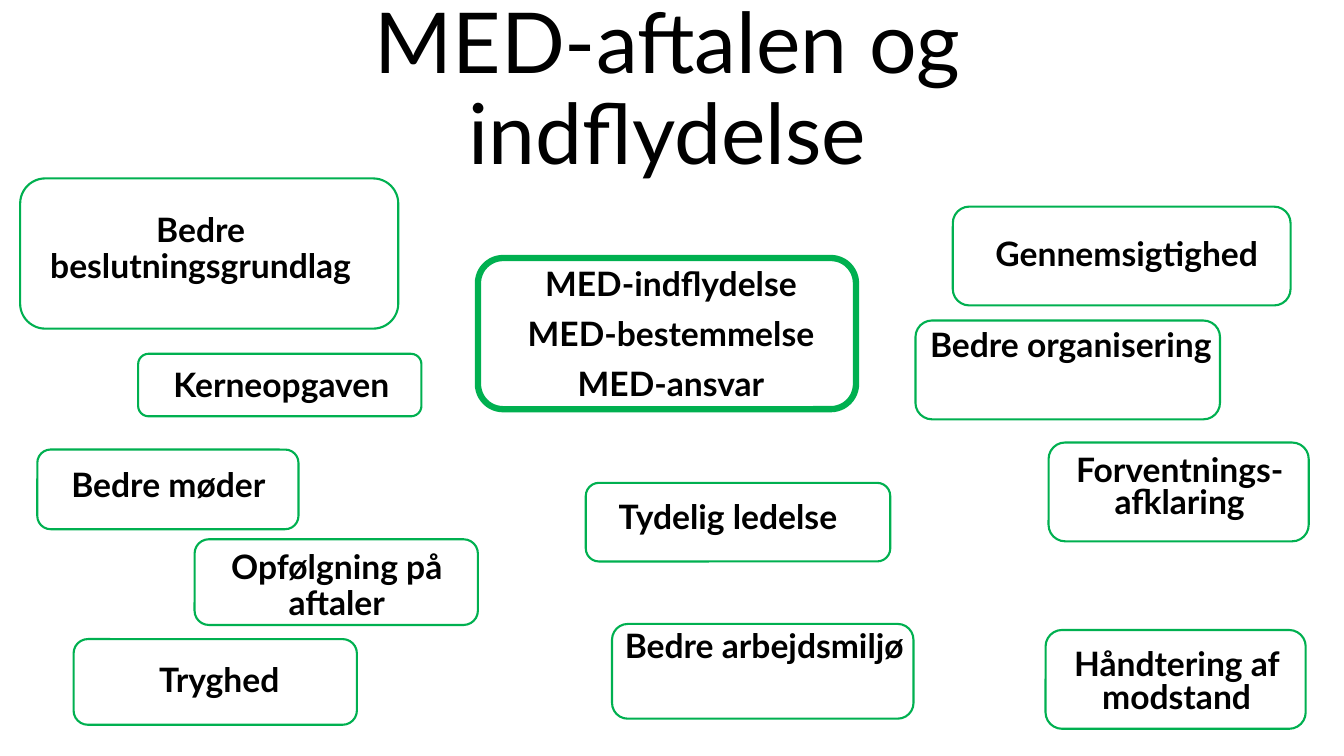
from pptx import Presentation
from pptx.dml.color import RGBColor
from pptx.enum.shapes import MSO_SHAPE
from pptx.enum.text import MSO_ANCHOR, PP_ALIGN
from pptx.util import Pt

ROUNDED = MSO_SHAPE.ROUNDED_RECTANGLE
TOP = MSO_ANCHOR.TOP
BOTTOM = MSO_ANCHOR.BOTTOM
CENTER = PP_ALIGN.CENTER

EMU_PER_PX = 9144
SLIDE_SIZE = (1333, 750)
COLORS = {"text": "000000", "outline": "00B050", "background": "FFFFFF"}

TOPICS = [
    ("Bedre beslutningsgrundlag", (20, 177, 375, 149), (20, 207, 358, 68), 0.9),
    ("Kerneopgaven", (137, 351, 281, 62), (128, 361, 302, 48), 0.9),
    ("Bedre møder", (37, 446, 259, 79), (16, 460, 302, 51), 0.9),
    ("Opfølgning på aftaler", (193, 535, 281, 85), (183, 541, 302, 84), 0.9),
    ("Tryghed", (73, 634, 281, 85), (0, 653, 435, 66), 0.9),
    ("Tydelig ledelse", (581, 479, 302, 78), (571, 492, 302, 51), 0.9),
    ("Bedre arbejdsmiljø", (607, 619, 299, 94), (607, 620, 302, 92), 0.9),
    ("Gennemsigtighed", (945, 205, 335, 98), (900, 231, 435, 66), 0.9),
    ("Bedre organisering", (908, 318, 302, 98), (911, 321, 302, 91), 0.9),
    ("Forventnings-afklaring", (1040, 439, 258, 98), (1019, 448, 302, 80), 0.8),
    ("Håndtering af modstand", (1037, 625, 258, 98), (1016, 641, 302, 80), 0.8),
]


def px(*lengths):
    return [length * EMU_PER_PX for length in lengths]


def color(name):
    return RGBColor.from_string(COLORS[name])


def write_paragraph(paragraph, text, font="Lato", size=24, bold=True,
                    line_spacing=0.9, space_before=10):
    paragraph.alignment = CENTER
    paragraph.line_spacing = line_spacing
    paragraph.space_before = Pt(space_before)
    run = paragraph.add_run()
    run.text = text
    run.font.name = font
    run.font.size = Pt(size)
    run.font.bold = bold
    run.font.color.rgb = color("text")


class SlideBuilder:
    def __init__(self, slide):
        self.slide = slide
        fill = slide.background.fill
        fill.solid()
        fill.fore_color.rgb = color("background")

    def outline(self, box, width=1.5):
        shape = self.slide.shapes.add_shape(ROUNDED, *px(*box))
        shape.shadow.inherit = False
        shape.fill.background()
        shape.line.color.rgb = color("outline")
        shape.line.width = Pt(width)

    def label(self, lines, box, anchor=TOP, **text_format):
        frame = self.slide.shapes.add_textbox(*px(*box)).text_frame
        frame.word_wrap = True
        frame.vertical_anchor = anchor
        for index, line in enumerate(lines):
            paragraph = frame.add_paragraph() if index else frame.paragraphs[0]
            write_paragraph(paragraph, line, **text_format)


def main():
    presentation = Presentation()
    presentation.slide_width, presentation.slide_height = px(*SLIDE_SIZE)
    slide = presentation.slides.add_slide(presentation.slide_layouts[6])
    builder = SlideBuilder(slide)

    builder.label(["MED-aftalen og indflydelse"], (162, -22, 1000, 208),
                  anchor=BOTTOM, size=60, bold=False, space_before=0)
    builder.outline((474, 256, 375, 150), width=4.5)
    builder.label(["MED-indflydelse", "MED-bestemmelse", "MED-ansvar"],
                  (448, 260, 435, 181))

    for text, outline_box, label_box, line_spacing in TOPICS:
        builder.outline(outline_box)
        builder.label([text], label_box, line_spacing=line_spacing)

    presentation.save("out.pptx")


if __name__ == "__main__":
    main()
